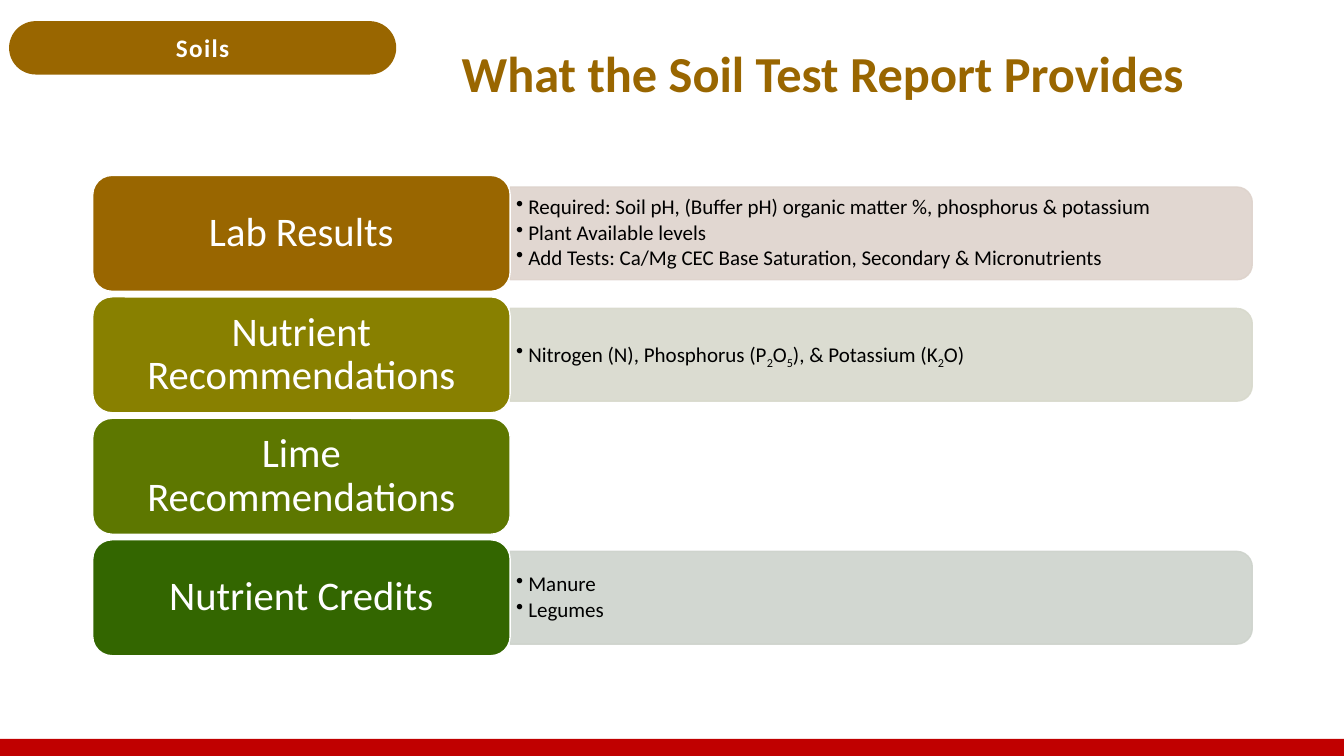
"""Build the slide on what a soil test report provides."""
from lxml import etree
from pptx import Presentation
from pptx.dml.color import RGBColor
from pptx.enum.shapes import MSO_SHAPE
from pptx.enum.text import MSO_ANCHOR, PP_ALIGN
from pptx.oxml.ns import qn
from pptx.util import Inches, Pt

FONT = "Calibri"
BROWN, RED, WHITE, BLACK = "996600", "C00000", "FFFFFF", "000000"
RECT, ROUNDED = MSO_SHAPE.RECTANGLE, MSO_SHAPE.ROUNDED_RECTANGLE
ROUNDED_TOP = MSO_SHAPE.ROUND_2_SAME_RECTANGLE
MIDDLE, CENTER, LEFT = MSO_ANCHOR.MIDDLE, PP_ALIGN.CENTER, PP_ALIGN.LEFT

TOPIC = "Soils"
TITLE = "What the Soil Test Report Provides"
SECTIONS = [
    ("Lab Results", BROWN, "DED3CC", [
        ["Required: Soil pH, (Buffer pH) organic matter %, phosphorus & potassium"],
        ["Plant Available levels"],
        ["Add Tests: Ca/Mg CEC Base Saturation, Secondary & Micronutrients"],
    ]),
    ("Nutrient Recommendations", "888000", "D8D9CC", [
        ["Nitrogen (N), Phosphorus (P", "2", "O", "5", "), & Potassium (K", "2", "O)"],
    ]),
    ("Lime Recommendations", "5D7700", None, []),
    ("Nutrient Credits", "336600", "CED3CC", [["Manure"], ["Legumes"]]),
]

SLIDE_W, SLIDE_H = 13.33, 7.5
FOOTER_H = 0.17
GRID_LEFT, GRID_TOP, ROW_PITCH = 0.92, 1.74, 1.205
LABEL_W, LABEL_H = 4.14, 1.15
PANEL_W, PANEL_H = 7.36, LABEL_H * 0.8
DETAIL_W, DETAIL_H = 7.32, 0.83
PANEL_OPACITY = 90
INDENT = 0.12


def rgb(value):
    """Turn a hex string into a colour."""
    return RGBColor.from_string(value)


def add_block(slide, preset, box, fill, line=None):
    """Add a flat filled shape with an optional outline."""
    block = slide.shapes.add_shape(preset, *map(Inches, box))
    block.shadow.inherit = False
    block.fill.solid()
    block.fill.fore_color.rgb = rgb(fill)
    if line:
        block.line.color.rgb = rgb(line)
        block.line.width = Pt(1)
    else:
        block.line.fill.background()
    return block


def set_frame(shape, margin_x=0.1, margin_y=0.05):
    """Prepare a wrapped, vertically centred text frame."""
    frame = shape.text_frame
    frame.word_wrap = True
    frame.vertical_anchor = MIDDLE
    frame.margin_left = frame.margin_right = Inches(margin_x)
    frame.margin_top = frame.margin_bottom = Inches(margin_y)
    return frame


def add_run(paragraph, text, size, color, bold=False):
    """Add one formatted run."""
    run = paragraph.add_run()
    run.text = text
    run.font.name, run.font.size, run.font.bold = FONT, Pt(size), bold
    run.font.color.rgb = rgb(color)
    return run


def write_line(shape, text, size, color, align, spacing=0.9, bold=False, **margins):
    """Write a single paragraph into a shape."""
    paragraph = set_frame(shape, **margins).paragraphs[0]
    paragraph.alignment = align
    paragraph.line_spacing = spacing
    return add_run(paragraph, text, size, color, bold)


def add_panel(slide, middle, color):
    """Add a translucent panel turned so its round corners face right."""
    center = GRID_LEFT + LABEL_W + PANEL_W / 2
    box = (center - PANEL_H / 2, middle - PANEL_W / 2, PANEL_H, PANEL_W)
    panel = add_block(slide, ROUNDED_TOP, box, color, color)
    panel.rotation = 90
    for tint in panel._element.spPr.iter(qn("a:srgbClr")):
        etree.SubElement(tint, qn("a:alpha")).set("val", str(PANEL_OPACITY * 1000))


def add_details(slide, middle, details):
    """Add the bulleted details, every second run being a subscript."""
    box = (GRID_LEFT + LABEL_W, middle - DETAIL_H / 2, DETAIL_W, DETAIL_H)
    frame = set_frame(slide.shapes.add_textbox(*map(Inches, box)), 0.06, 0.03)
    for number, pieces in enumerate(details):
        paragraph = frame.add_paragraph() if number else frame.paragraphs[0]
        paragraph.line_spacing = 0.9
        paragraph.space_after = Pt(2.25)
        properties = paragraph._p.get_or_add_pPr()
        properties.set("marL", str(Inches(INDENT)))
        properties.set("indent", str(-Inches(INDENT)))
        etree.SubElement(properties, qn("a:buChar")).set("char", "•")
        for position, piece in enumerate(pieces):
            run = add_run(paragraph, piece, 15, BLACK)
            if position % 2:
                run.font._element.set("baseline", "-25000")


def main():
    """Lay out the slide and save it."""
    deck = Presentation()
    deck.slide_width, deck.slide_height = Inches(SLIDE_W), Inches(SLIDE_H)
    slide = deck.slides.add_slide(deck.slide_layouts[6])

    add_block(slide, RECT, (0, SLIDE_H - FOOTER_H, SLIDE_W, FOOTER_H), RED)
    topic = add_block(slide, ROUNDED, (0.09, 0.21, 3.84, 0.53), BROWN)
    topic.adjustments[0] = 0.5
    topic_run = write_line(topic, TOPIC, 18, WHITE, CENTER, spacing=1.0, bold=True)
    topic_run.font._element.set("spc", "100")

    for row, (name, color, tint, details) in enumerate(SECTIONS):
        top = GRID_TOP + row * ROW_PITCH
        middle = top + LABEL_H / 2
        if details:
            add_panel(slide, middle, tint)
            add_details(slide, middle, details)
        label = add_block(slide, ROUNDED, (GRID_LEFT, top, LABEL_W, LABEL_H), color, WHITE)
        write_line(label, name, 29, WHITE, CENTER, margin_x=0.12, margin_y=0.06)

    title = slide.shapes.add_textbox(*map(Inches, (4.48, 0.26, 7.76, 1)))
    write_line(title, TITLE, 36, BROWN, LEFT, bold=True)
    deck.save("out.pptx")


if __name__ == "__main__":
    main()
